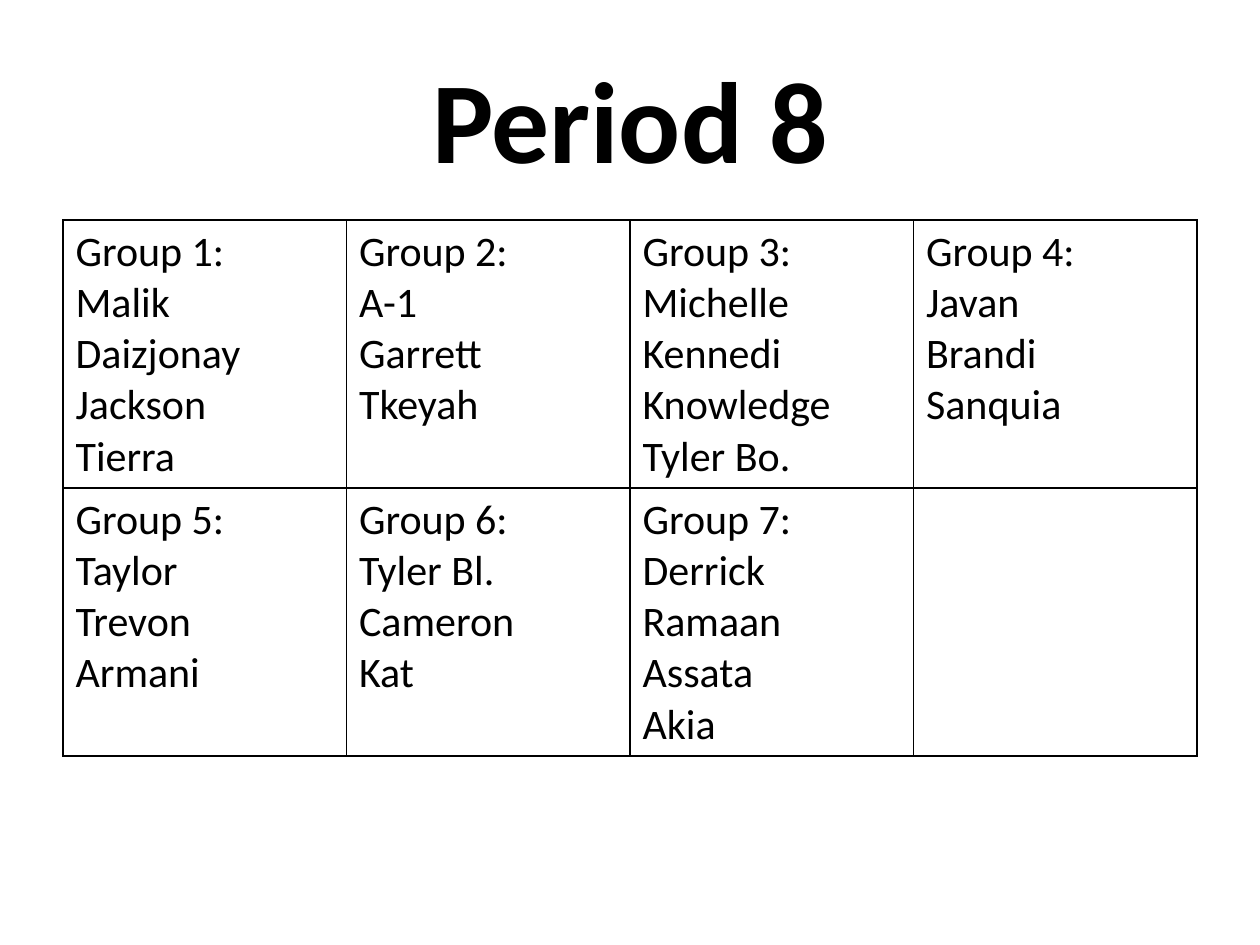
from lxml import etree
from pptx import Presentation, util as u
from pptx.dml.color import RGBColor
from pptx.enum import text
from pptx.oxml import ns

COLORS = {"background": "FFFFFF", "ink": "000000"}
FONT = "Calibri"
COLUMNS = 4
GROUPS = [
    ["Malik", "Daizjonay", "Jackson", "Tierra"],
    ["A-1", "Garrett", "Tkeyah"],
    ["Michelle", "Kennedi", "Knowledge", "Tyler Bo."],
    ["Javan", "Brandi", "Sanquia"],
    ["Taylor", "Trevon", "Armani"],
    ["Tyler Bl.", "Cameron", "Kat"],
    ["Derrick", "Ramaan", "Assata", "Akia"],
]


def px(length):
    return u.Emu(round(length * 914400 / 126))


def color(name):
    return RGBColor.from_string(COLORS[name])


def add_run(paragraph, content, size, bold=False):
    run = paragraph.add_run()
    run.text = content
    run.font.name = FONT
    run.font.size = u.Pt(size)
    run.font.bold = bold
    run.font.color.rgb = color("ink")


def write_lines(frame, lines, size):
    for index, line in enumerate(lines):
        paragraph = frame.add_paragraph() if index else frame.paragraphs[0]
        add_run(paragraph, line, size)


def set_borders(cell, points):
    properties = cell._tc.get_or_add_tcPr()
    # Border lines must come before the cell's fill
    for index, side in enumerate(("lnL", "lnR", "lnT", "lnB")):
        line = etree.Element(ns.qn(f"a:{side}"), w=str(u.Pt(points)))
        fill = etree.SubElement(line, ns.qn("a:solidFill"))
        etree.SubElement(fill, ns.qn("a:srgbClr"), val=COLORS["ink"])
        properties.insert(index, line)


def add_title(slide, left, top, width, height):
    shape = slide.shapes.add_textbox(px(left), px(top), px(width), px(height))
    frame = shape.text_frame
    frame.word_wrap = True
    frame.vertical_anchor = text.MSO_ANCHOR.MIDDLE
    paragraph = frame.paragraphs[0]
    paragraph.alignment = text.PP_ALIGN.CENTER
    add_run(paragraph, "Period 8", 66, bold=True)


def add_groups(slide, left, top, width, height):
    rows = -(-len(GROUPS) // COLUMNS)
    table = slide.shapes.add_table(
        rows, COLUMNS, px(left), px(top), px(width), px(height)).table
    table.first_row = False
    table.horz_banding = False
    for index, cell in enumerate(table.iter_cells()):
        cell.fill.background()
        set_borders(cell, 1)
        if index < len(GROUPS):
            lines = [f"Group {index + 1}:"] + GROUPS[index]
            write_lines(cell.text_frame, lines, 24)


def main():
    presentation = Presentation()
    presentation.slide_width = px(1260)
    presentation.slide_height = px(945)
    slide = presentation.slides.add_slide(presentation.slide_layouts[6])
    slide.background.fill.solid()
    slide.background.fill.fore_color.rgb = color("background")

    # Heading above the seating groups
    add_title(slide, 63, 38, 1134, 158)
    add_groups(slide, 63, 220, 1134, 536)

    presentation.save("out.pptx")


if __name__ == "__main__":
    main()
